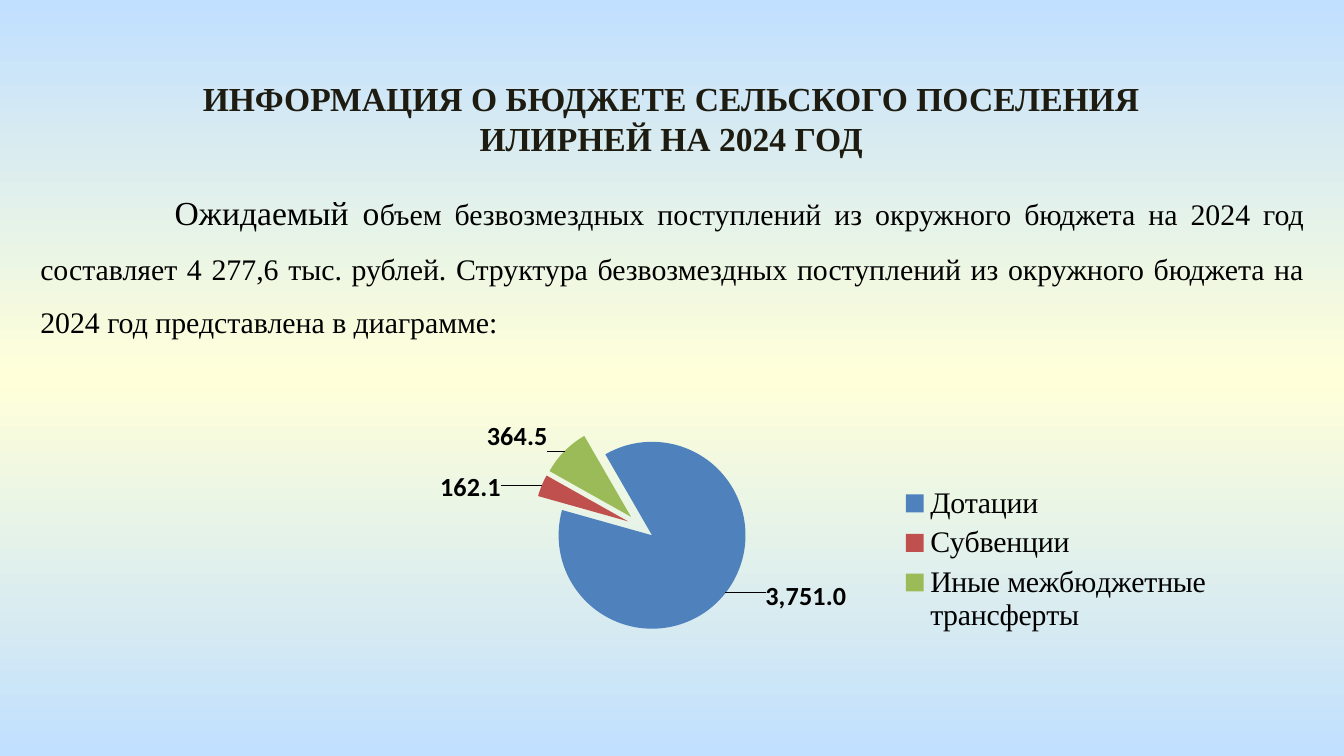
from copy import deepcopy

from pptx import Presentation
from pptx.chart.data import CategoryChartData as Data
from pptx.dml.color import RGBColor as RGB
from pptx.enum.chart import XL_CHART_TYPE as Kind, XL_LABEL_POSITION as Spot
from pptx.enum.chart import XL_LEGEND_POSITION as Side
from pptx.enum.text import MSO_ANCHOR as Anchor, MSO_AUTO_SIZE as Fit, PP_ALIGN as Align
from pptx.oxml import parse_xml
from pptx.oxml.ns import nsdecls, qn
from pptx.util import Inches, Pt

HUES = {
    "sky": "C1E0FF", "cream": "FFFFD9", "title": "1E1C11", "text": "000000",
    "blue": "4F81BD", "red": "C0504D", "green": "9BBB59",
}
SERIF = "Times New Roman"
SANS = "Calibri"
FORMAT = "#,##0.0"
WIDE, HIGH = 8.25, 2.55  # chart size
PIE = 1.6  # side of the plot area

# Name, value, colour, label shift as a share of the chart
PARTS = [
    ("Дотации", 3751, "blue", (0.03, -0.05)),
    ("Субвенции", 162.1, "red", (-0.03, 0.06)),
    ("Иные межбюджетные трансферты", 364.5, "green", (-0.01, 0.02)),
]


def style(font, size, face=SERIF, hue="text", bold=False):
    font.size, font.name, font.bold = Pt(size), face, bold
    font.color.rgb = RGB.from_string(HUES[hue])


def paint(slide):
    """Vertical gradient: sky, cream, sky."""
    fill = slide.background.fill
    fill.gradient()
    fill.gradient_angle = 270
    first, last = fill.gradient_stops
    for stop, hue in ((first, "cream"), (last, "sky")):
        stop.color.rgb = RGB.from_string(HUES[hue])
    stops = slide.background._cSld.find(".//" + qn("a:gsLst"))
    middle = deepcopy(stops[0])
    middle.set("pos", "50000")
    stops.insert(1, middle)
    first.color.rgb = RGB.from_string(HUES["sky"])


def write(shape, runs, box, align, space=1.0, indent=0, hue="text", bold=False):
    """Place a placeholder and fill it with one paragraph of (text, size) runs."""
    shape.left, shape.top, shape.width, shape.height = map(Inches, box)
    frame = shape.text_frame
    frame.word_wrap, frame.auto_size = True, Fit.NONE
    frame.vertical_anchor = Anchor.TOP
    para = frame.paragraphs[0]
    para.alignment, para.line_spacing = align, space
    para.space_before = Pt(0)
    props = para._p.get_or_add_pPr()
    props.set("marL", "0")
    props.set("indent", str(Inches(indent)))
    props.append(parse_xml(f"<a:buNone {nsdecls('a')}/>"))
    for text, size in runs:
        run = para.add_run()
        run.text = text
        style(run.font, size, hue=hue, bold=bold)


def layout(x, y, size=None):
    """Manual layout: a label shift, or an inner plot area if size is given."""
    tags = [("x", x), ("y", y)]
    if size:
        tags = [("layoutTarget", "inner"), ("xMode", "edge"), ("yMode", "edge"),
                *tags, ("w", size[0]), ("h", size[1])]
    body = "".join(f'<c:{tag} val="{val}"/>' for tag, val in tags)
    return parse_xml(f"<c:layout {nsdecls('c')}><c:manualLayout>{body}"
                     "</c:manualLayout></c:layout>")


def add_pie(slide, box):
    data = Data(number_format=FORMAT)
    data.categories = [part[0] for part in PARTS]
    data.add_series("Series 1", [part[1] for part in PARTS])
    chart = slide.shapes.add_chart(Kind.PIE_EXPLODED, *map(Inches, box), data).chart
    style(chart.font, 18, SANS)
    chart.has_title = False

    # Legend
    chart.has_legend = True
    chart.legend.position = Side.RIGHT
    chart.legend.include_in_layout = False
    style(chart.legend.font, 16)

    # Plot area and rotation
    area = chart._chartSpace.chart.plotArea
    for old in area.findall(qn("c:layout")):
        area.remove(old)
    area.insert(0, layout(3.09 / WIDE, 0.09, (PIE / WIDE, PIE / HIGH)))
    plot = chart.plots[0]
    plot.vary_by_categories = True
    pie = area.find(qn("c:pieChart"))
    for old in pie.findall(qn("c:firstSliceAng")):
        pie.remove(old)
    pie.append(parse_xml(f'<c:firstSliceAng {nsdecls("c")} val="330"/>'))
    series = plot.series[0]
    pie.find(".//" + qn("c:explosion")).set("val", "15")

    # Labels and slices
    labels = series.data_labels
    labels.show_value = True
    labels.number_format, labels.number_format_is_linked = FORMAT, False
    labels.position = Spot.OUTSIDE_END
    style(labels.font, 14, SANS, bold=True)
    for i, (_, _, hue, shift) in enumerate(PARTS):
        point = series.points[i]
        point.format.fill.solid()
        point.format.fill.fore_color.rgb = RGB.from_string(HUES[hue])
        label = point.data_label
        style(label.font, 14, SANS, bold=True)
        label.position = Spot.OUTSIDE_END
        node = labels._element.findall(qn("c:dLbl"))[i]
        node.insert(1, layout(*shift))
        node.insert(2, parse_xml(f'<c:numFmt {nsdecls("c")} formatCode="{FORMAT}" '
                                 'sourceLinked="0"/>'))


def main():
    deck = Presentation()
    deck.slide_width = Inches(10)
    deck.slide_height = deck.slide_width * 9 // 16
    slide = deck.slides.add_slide(deck.slide_layouts[1])
    paint(slide)
    title, body = slide.placeholders
    write(title, [("ИНФОРМАЦИЯ О БЮДЖЕТЕ СЕЛЬСКОГО ПОСЕЛЕНИЯ ИЛИРНЕЙ НА 2024 ГОД", 18)],
          (1.13, 0.53, 7.73, 0.71), Align.CENTER, hue="title", bold=True)
    write(body, [("Ожидаемый о", 18),
                 ("бъем безвозмездных поступлений из окружного бюджета на 2024 год "
                  "составляет 4 277,6 тыс. рублей. Структура безвозмездных поступлений "
                  "из окружного бюджета на 2024 год представлена в диаграмме:", 16)],
          (0.2, 1.23, 9.61, 1.36), Align.JUSTIFY, space=1.5, indent=1)
    add_pie(slide, (0.88, 2.89, WIDE, HIGH))
    deck.save("out.pptx")


if __name__ == "__main__":
    main()
